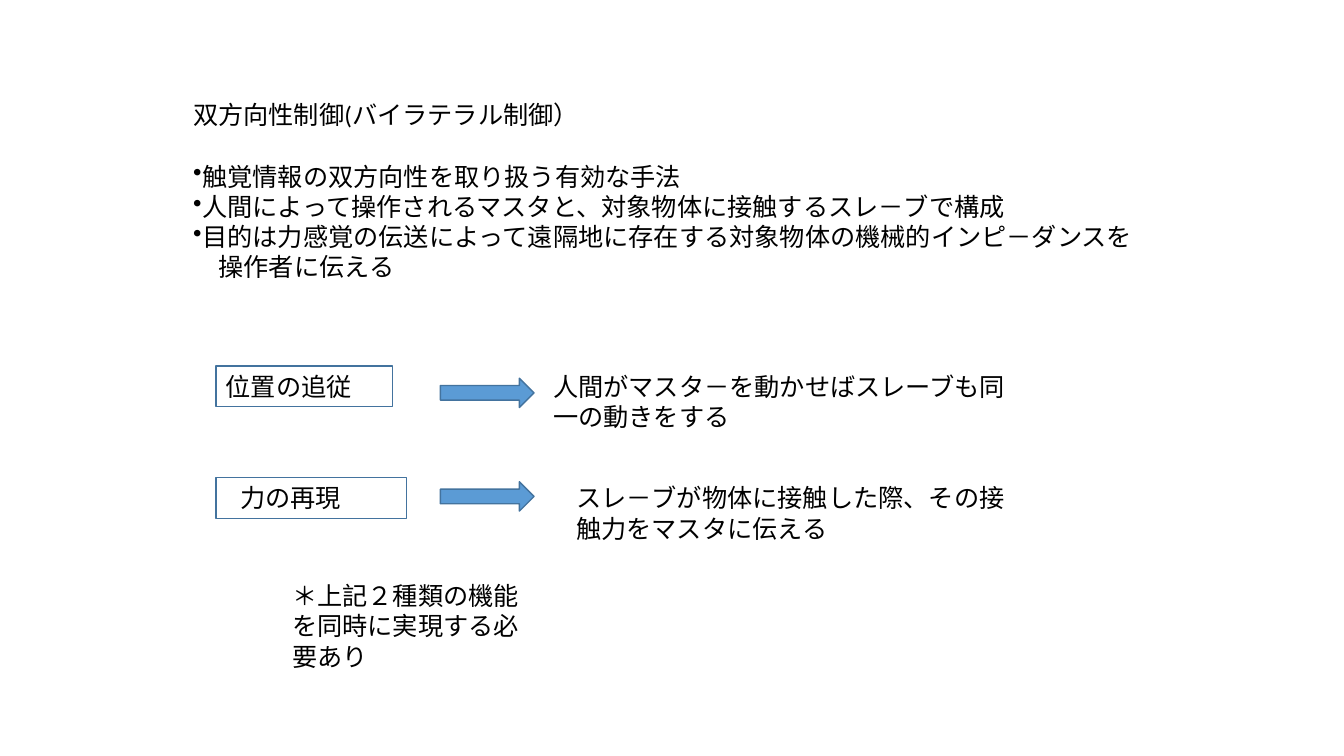
from dataclasses import dataclass

import pptx
import pptx.dml.color
import pptx.enum.shapes
import pptx.enum.text
import pptx.oxml
import pptx.oxml.ns
import pptx.util
from pptx.util import Cm

COLORS = {"text": "000000", "arrow": "5B9BD5", "outline": "43739E"}
FONT = "Calibri"
FONT_SIZE = 18
BULLET_INDENT = Cm(0.23)
CONTINUATION_INDENT = Cm(0.64)

TITLE = "双方向性制御(バイラテラル制御）"
BULLETS = [
    "触覚情報の双方向性を取り扱う有効な手法",
    "人間によって操作されるマスタと、対象物体に接触するスレ－ブで構成",
    "目的は力感覚の伝送によって遠隔地に存在する対象物体の機械的インピ－ダンスを",
]
CONTINUATION = "操作者に伝える"
NOTE = "＊上記２種類の機能を同時に実現する必要あり"


@dataclass
class Function:
    """One control function: boxed label, arrow and explanation (cm)."""
    label: str
    explanation: str
    top: float
    box_width: float
    label_inset: float
    arrow_top: float
    text_left: float


FUNCTIONS = [
    Function("位置の追従", "人間がマスタ－を動かせばスレーブも同一の動きをする",
             9.22, 4.45, 0.25, 9.53, 13.69),
    Function("力の再現", "スレ－ブが物体に接触した際、その接触力をマスタに伝える",
             12.04, 4.8, 0.61, 12.14, 14.27),
]
BOX_LEFT, BOX_HEIGHT = 5.44, 1.02
ARROW_LEFT, ARROW_WIDTH, ARROW_HEIGHT = 11.1, 2.36, 0.74
TEXT_RIGHT, TEXT_HEIGHT = 25.6, 1.8


def rgb(name: str) -> pptx.dml.color.RGBColor:
    return pptx.dml.color.RGBColor.from_string(COLORS[name])


def write(tf, lines: list[str]) -> None:
    tf.word_wrap = True
    tf.vertical_anchor = pptx.enum.text.MSO_ANCHOR.TOP
    for i, line in enumerate(lines):
        p = tf.paragraphs[0] if i == 0 else tf.add_paragraph()
        p.text = line
        p.alignment = pptx.enum.text.PP_ALIGN.LEFT
        p.font.name = FONT
        p.font.size = pptx.util.Pt(FONT_SIZE)
        p.font.color.rgb = rgb("text")


def add_text(s, left: float, top: float, width: float, height: float,
             lines: list[str]):
    sp = s.shapes.add_textbox(Cm(left), Cm(top), Cm(width), Cm(height))
    write(sp.text_frame, lines)
    return sp.text_frame


def add_outlined(s, kind, left: float, top: float, width: float, height: float):
    sp = s.shapes.add_shape(kind, Cm(left), Cm(top), Cm(width), Cm(height))
    sp.shadow.inherit = False
    sp.line.color.rgb = rgb("outline")
    sp.line.width = pptx.util.Pt(1)
    return sp


def set_bullet(p) -> None:
    pPr = p._p.get_or_add_pPr()
    pPr.set("marL", str(BULLET_INDENT))
    pPr.set("indent", str(-BULLET_INDENT))
    bullet = pptx.oxml.parse_xml(
        f'<a:buChar {pptx.oxml.ns.nsdecls("a")} char="•"/>')
    pPr.insert_element_before(bullet, "a:tabLst", "a:defRPr", "a:extLst")


def add_overview(s) -> None:
    tf = add_text(s, 4.62, 2.39, 25.12, 5.64, [TITLE, *BULLETS, CONTINUATION])
    _, *bullets, continuation = tf.paragraphs
    bullets[0].space_before = pptx.util.Pt(22)
    for p in bullets:
        set_bullet(p)
    continuation._p.get_or_add_pPr().set("marL", str(CONTINUATION_INDENT))


def add_function(s, f: Function) -> None:
    kinds = pptx.enum.shapes.MSO_SHAPE
    box = add_outlined(s, kinds.RECTANGLE, BOX_LEFT, f.top, f.box_width, BOX_HEIGHT)
    box.fill.background()
    write(box.text_frame, [f.label])
    box.text_frame.margin_left = Cm(f.label_inset)
    arrow = add_outlined(s, kinds.RIGHT_ARROW, ARROW_LEFT, f.arrow_top,
                         ARROW_WIDTH, ARROW_HEIGHT)
    arrow.fill.solid()
    arrow.fill.fore_color.rgb = rgb("arrow")
    add_text(s, f.text_left, f.top, TEXT_RIGHT - f.text_left, TEXT_HEIGHT,
             [f.explanation])


def main() -> None:
    prs = pptx.Presentation()
    prs.slide_width, prs.slide_height = Cm(33.87), Cm(19.05)
    s = prs.slides.add_slide(prs.slide_layouts[6])
    add_overview(s)
    for f in FUNCTIONS:
        add_function(s, f)
    add_text(s, 7.11, 14.5, 6.32, 2.57, [NOTE])
    prs.save("out.pptx")


if __name__ == "__main__":
    main()
